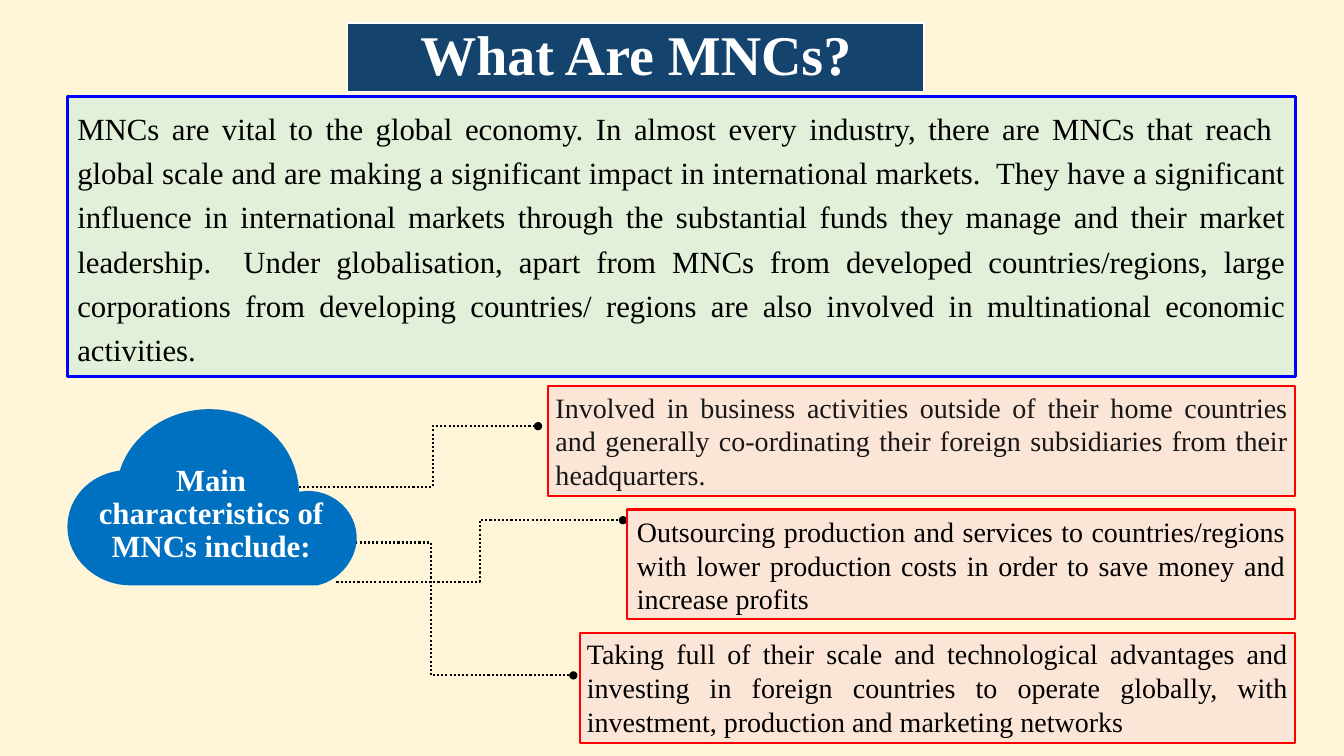
from dataclasses import dataclass
from lxml.etree import SubElement
from pptx import Presentation
from pptx.dml.color import RGBColor as RGB
from pptx.enum.dml import MSO_LINE as Dash
from pptx.enum.shapes import MSO_CONNECTOR as Conn, MSO_SHAPE as Shape
from pptx.enum.text import MSO_ANCHOR as Anchor, PP_ALIGN as Align
from pptx.oxml.ns import qn
from pptx.util import Cm, Pt


@dataclass(frozen=True)
class Theme:
    """Colours, font and type sizes of the slide."""
    font: str = "Times New Roman"
    page: str = "FFF5D9"
    navy: str = "14446E"
    white: str = "FFFFFF"
    black: str = "000000"
    soft_black: str = "181717"
    green: str = "E2F0D9"
    blue: str = "0000FF"
    cloud: str = "0070C0"
    peach: str = "FBE5D6"
    red: str = "FF0000"
    title_size: int = 40
    lead_size: int = 22
    card_size: int = 20


T = Theme()

DEFINITION = (
    "MNCs are vital to the global economy. In almost every industry, there are MNCs that reach  "
    "global scale and are making a significant impact in international markets.  They have a "
    "significant influence in international markets through the substantial funds they manage and "
    "their market leadership.  Under globalisation, apart from MNCs from developed "
    "countries/regions, large corporations from developing countries/ regions are also involved "
    "in multinational economic activities.")

CLOUD_START = (1.32, 1.55)
CLOUD_CURVES = [
    ((1.60, 0.66), (2.51, 0), (3.58, 0)),
    ((4.83, 0), (5.79, 0.91), (5.84, 2.08)),
    ((5.92, 2.08), (5.99, 2.06), (6.05, 2.06)),
    ((6.73, 2.06), (7.29, 2.59), (7.29, 3.25)),
    ((7.29, 3.78), (6.86, 4.32), (6.30, 4.44)),
    ((6.30, 4.44), (1.57, 4.44), (1.57, 4.44)),
    ((0.74, 4.44), (0, 3.78), (0, 2.97)),
    ((0, 2.24), (0.56, 1.65), CLOUD_START),
]

CARD_RIGHT, CARD_TOP, CARD_PITCH, CARD_HEIGHT = 32.64, 9.73, 3.11, 2.77


@dataclass(frozen=True)
class Card:
    """One characteristic, with the dotted line that leads to it."""
    text: str
    left: float
    colour: str
    insets: tuple
    start: tuple
    end_offset: tuple
    bend: float


CARDS = [
    Card("Involved in business activities outside of their home countries and generally "
         "co-ordinating their foreign subsidiaries from their headquarters.",
         13.82, T.soft_black, (0.18, 0.1), (6.58, 12.27), (-0.26, 1.01), 0.62),
    Card("Outsourcing production and services to countries/regions with lower production costs "
         "in order to save money and increase profits",
         15.8, T.black, (0.25, 0.13), (8.48, 14.66), (-0.1, 0.27), 0.5),
    Card("Taking full of their scale and technological advantages and investing in foreign "
         "countries to operate globally, with investment, production and marketing networks",
         14.61, T.black, (0.18, 0.1), (7.26, 13.67), (-0.16, 1.07), 0.5),
]


def paint(sp, fill, line=None, width=1):
    """Give a shape its fill and outline."""
    sp.fill.solid()
    sp.fill.fore_color.rgb = RGB.from_string(fill)
    if line:
        sp.line.color.rgb = RGB.from_string(line)
        sp.line.width = Pt(width)
    else:
        sp.line.fill.background()


def write(sp, text, size, colour, align, insets, bold=False, spacing=1.0, anchor=Anchor.TOP):
    """Set the single paragraph of a shape."""
    tf = sp.text_frame
    tf.word_wrap = True
    tf.vertical_anchor = anchor
    tf.margin_left = tf.margin_right = Cm(insets[0])
    tf.margin_top = tf.margin_bottom = Cm(insets[1])
    p = tf.paragraphs[0]
    p.alignment, p.line_spacing = align, spacing
    r = p.add_run()
    r.text = text
    r.font.name, r.font.size, r.font.bold = T.font, Pt(size), bold
    r.font.color.rgb = RGB.from_string(colour)


def panel(slide, box, fill, line, width):
    """Add an outlined rectangle."""
    sp = slide.shapes.add_shape(Shape.RECTANGLE, *map(Cm, box))
    sp.shadow.inherit = False
    paint(sp, fill, line, width)
    return sp


def add_title(slide, box):
    """Turn the title placeholder into a rounded banner."""
    sp = slide.shapes.title
    sp.left, sp.top, sp.width, sp.height = map(Cm, box)
    geom = SubElement(sp.element.spPr, qn("a:prstGeom"), prst="roundRect")
    SubElement(geom, qn("a:avLst"))
    paint(sp, T.navy, T.white)
    write(sp, "What Are MNCs?", T.title_size, T.white, Align.CENTER, (0.69, 0.08),
          bold=True, spacing=0.9, anchor=Anchor.MIDDLE)


def add_definition(slide, box):
    """Add the introductory paragraph."""
    sp = panel(slide, box, T.green, T.blue, 2.25)
    write(sp, DEFINITION, T.lead_size, T.black, Align.JUSTIFY, (0.25, 0.13), spacing=1.2)


def add_link(slide, start, end, bend):
    """Add a dotted elbow line that ends in a dot."""
    cx = slide.shapes.add_connector(Conn.ELBOW, *map(Cm, start + end))
    cx.line.color.rgb = RGB.from_string(T.black)
    cx.line.width = Pt(1.5)
    cx.line.dash_style = Dash.ROUND_DOT
    props = cx.element.spPr
    SubElement(props.find(qn("a:ln")), qn("a:tailEnd"), type="oval")
    SubElement(props, qn("a:effectLst"))
    geom = props.find(qn("a:prstGeom"))
    guides = geom.find(qn("a:avLst"))
    if guides is None:
        guides = SubElement(geom, qn("a:avLst"))
    SubElement(guides, qn("a:gd"), name="adj1", fmla=f"val {round(bend * 100000)}")


def cloud_points(steps=16):
    """Trace the curves of the cloud as short segments."""
    here = CLOUD_START
    for a, b, end in CLOUD_CURVES:
        for t in (i / steps for i in range(1, steps + 1)):
            u = 1 - t
            yield tuple(u**3 * p + 3 * u * u * t * q + 3 * u * t * t * r + t**3 * s
                        for p, q, r, s in zip(here, a, b, end))
        here = end


def add_cloud(slide, left, top):
    """Add the cloud and its caption."""
    def place(point):
        return Cm(left + point[0]), Cm(top + point[1])

    outline = slide.shapes.build_freeform(*place(CLOUD_START))
    outline.add_line_segments([place(point) for point in cloud_points()])
    sp = outline.convert_to_shape()
    sp.shadow.inherit = False
    paint(sp, T.cloud)
    caption = slide.shapes.add_textbox(*place((0.18, 1.3)), Cm(6.88), Cm(2.74))
    write(caption, "Main characteristics of MNCs include:", T.lead_size, T.white,
          Align.CENTER, (0.18, 0.1), bold=True, spacing=0.9)


def add_characteristics(slide, left, top):
    """Add the links, the cloud they leave and the cards they reach."""
    tops = [CARD_TOP + i * CARD_PITCH for i in range(len(CARDS))]
    for card, y in zip(CARDS, tops):
        dx, dy = card.end_offset
        add_link(slide, card.start, (card.left + dx, y + dy), card.bend)
    add_cloud(slide, left, top)
    for card, y in zip(CARDS, tops):
        sp = panel(slide, (card.left, y, CARD_RIGHT - card.left, CARD_HEIGHT),
                   T.peach, T.red, 1.5)
        write(sp, card.text, T.card_size, card.colour, Align.JUSTIFY, card.insets)


def main():
    """Build and save the slide."""
    prs = Presentation()
    prs.slide_width, prs.slide_height = Cm(33.87), Cm(19.05)
    slide = prs.slides.add_slide(prs.slide_layouts[5])
    slide.background.fill.solid()
    slide.background.fill.fore_color.rgb = RGB.from_string(T.page)
    add_title(slide, (8.76, 0.58, 14.53, 1.73))
    add_definition(slide, (1.7, 2.44, 30.94, 7.04))
    add_characteristics(slide, 1.7, 10.31)
    prs.save("out.pptx")


if __name__ == "__main__":
    main()
